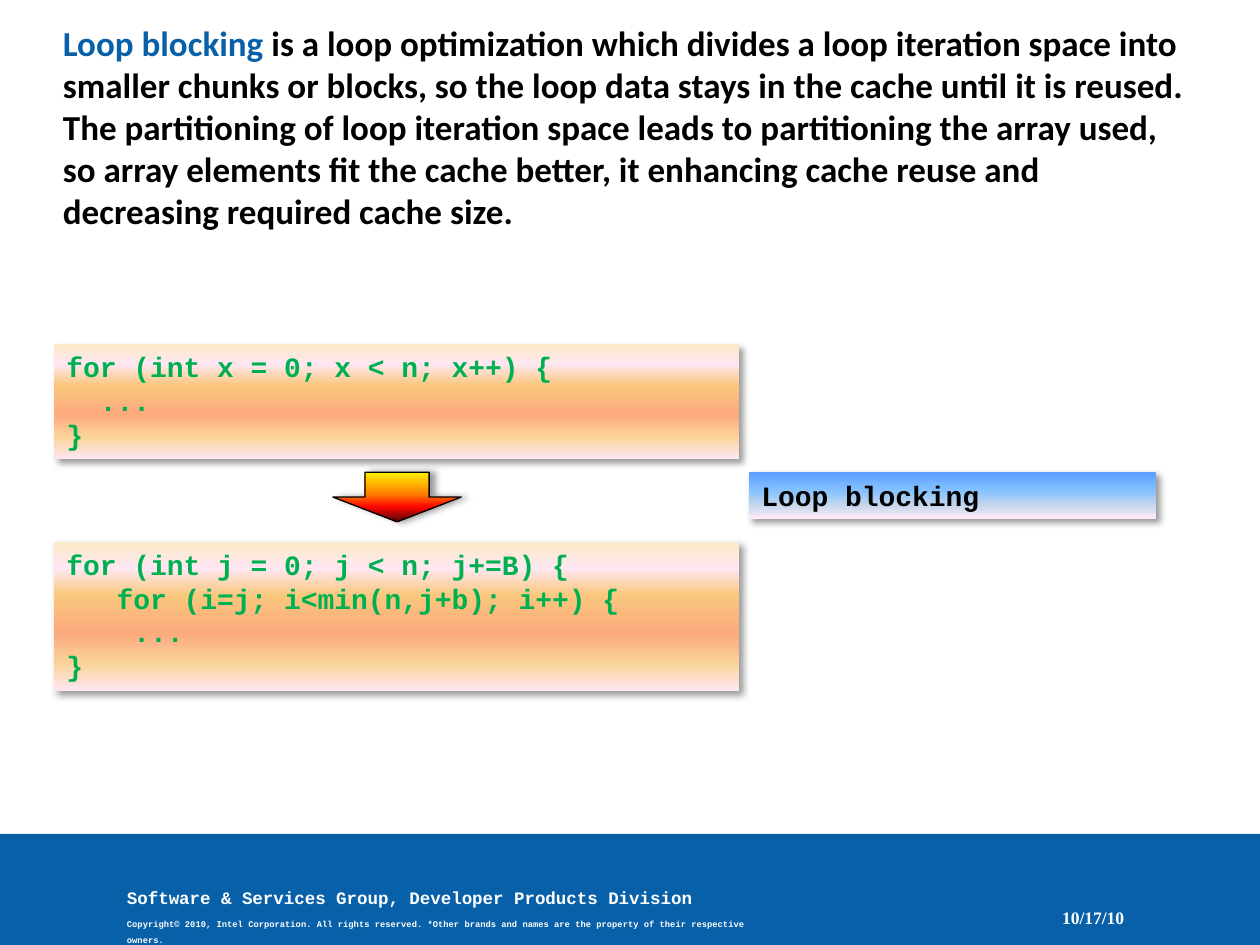
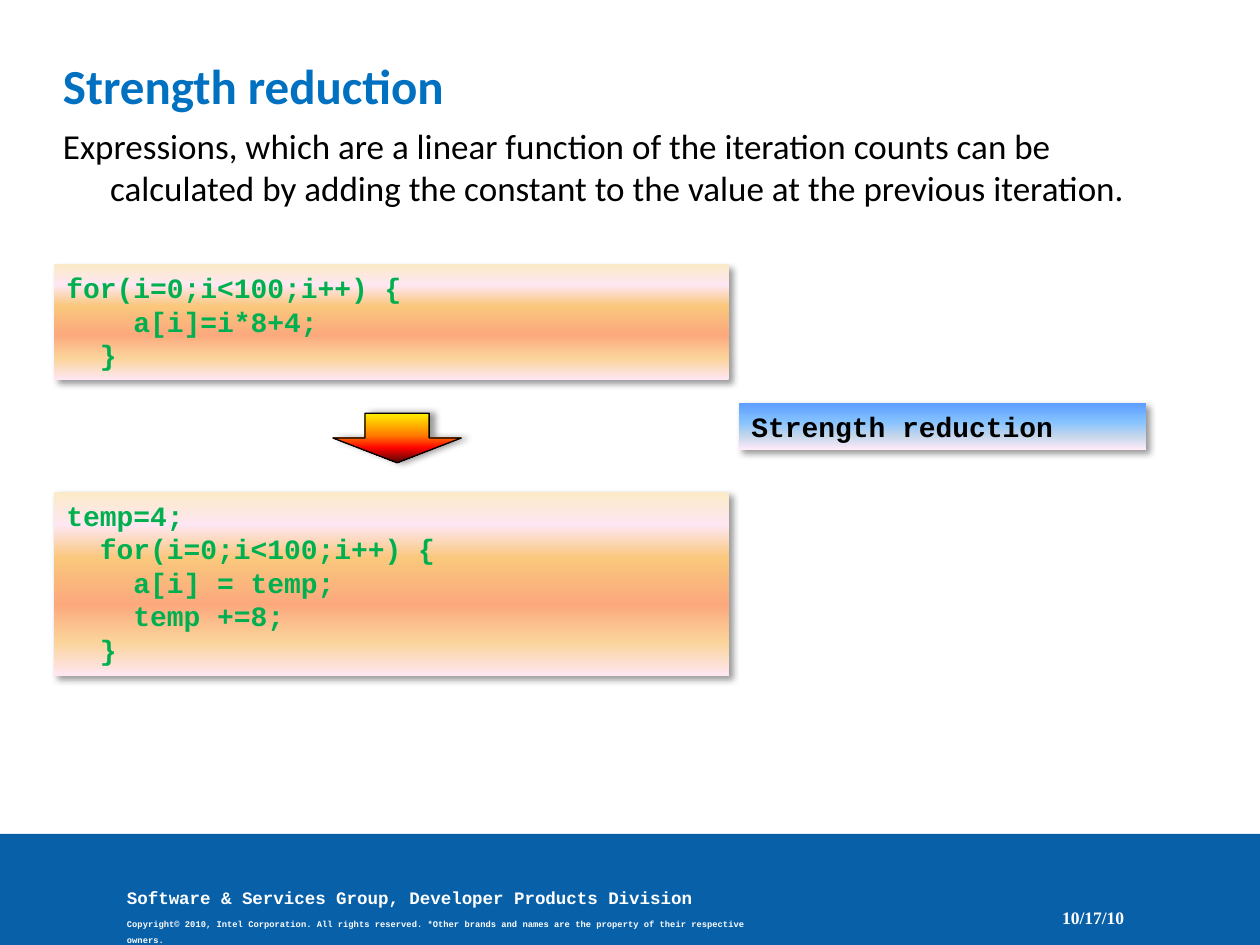
from dataclasses import dataclass

from lxml import etree
from pptx import Presentation
from pptx import util as u
from pptx.dml import color as c
from pptx.enum import shapes as s, text as t
from pptx.oxml import ns


@dataclass(frozen=True)
class Theme:
    band: str = "0860A8"
    head: str = "0070C0"
    code: str = "00B050"
    dark: str = "000000"
    light: str = "FFFFFF"
    sand: tuple = ((0, "FBEAC7"), (18, "FEE7F2"), (36, "FAC77D"),
                   (61, "FBA97D"), (82, "FBD49C"), (100, "FEE7F2"))
    fire: tuple = ((0, "FFF200"), (45, "FF7A00"), (70, "FF0300"), (100, "4D0808"))
    sky: tuple = ((0, "5E9EFF"), (40, "85C2FF"), (70, "C4D6EB"), (100, "FFEBFA"))
    sans: str = "Calibri"
    mono: str = "Courier New"
    serif: str = "Times New Roman"
    big: int = 28
    body: int = 20
    mid: int = 16
    small: int = 10
    tiny: int = 5


T = Theme()
LEFT = 1.09
GAP = 0.21
PAD = 0.25
LINE = 0.69


def cm(*nums):
    return [u.Cm(n) for n in nums]


def style(run, face, size, tint, bold=True):
    font = run.font
    font.name, font.size, font.bold = face, u.Pt(size), bold
    font.color.rgb = c.RGBColor.from_string(tint)


def add(parent, tag, **attrs):
    node = etree.SubElement(parent, ns.qn(tag))
    for key, value in attrs.items():
        node.set(key, str(value))
    return node


def tint_stops(shape, stops):
    shape.fill.gradient()
    shape.fill.gradient_angle = 270
    group = shape.element.spPr.find(ns.qn("a:gradFill")).find(ns.qn("a:gsLst"))
    for old in list(group):
        group.remove(old)
    for at, tint in stops:
        add(add(group, "a:gs", pos=at * 1000), "a:srgbClr", val=tint)


def cast_shadow(shape, angle):
    shape.shadow.inherit = False
    effects = shape.element.spPr.find(ns.qn("a:effectLst"))
    outer = add(effects, "a:outerShdw", blurRad=u.Pt(4), dist=u.Pt(3),
                dir=angle * 60000, algn="ctr", rotWithShape=0)
    add(add(outer, "a:srgbClr", val=T.dark), "a:alpha", val=40000)


def add_box(slide, kind, place, stops, angle=45):
    shape = slide.shapes.add_shape(kind, *cm(*place))
    tint_stops(shape, stops)
    shape.line.fill.background()
    cast_shadow(shape, angle)
    return shape


def add_panel(slide, x, y, wide, lines, stops, tint):
    place = x, y, wide, PAD + LINE * len(lines)
    frame = add_box(slide, s.MSO_SHAPE.RECTANGLE, place, stops).text_frame
    frame.word_wrap = True
    frame.vertical_anchor = t.MSO_ANCHOR.TOP
    frame.text = "\n".join(lines)
    for para in frame.paragraphs:
        para.alignment = t.PP_ALIGN.LEFT
        style(para.runs[0], T.mono, T.mid, tint)


def add_arrow(slide, y):
    arrow = add_box(slide, s.MSO_SHAPE.DOWN_ARROW, (6.71, y, 2.59, 1), T.fire, 0)
    arrow.line.color.rgb = c.RGBColor.from_string(T.dark)
    arrow.line.width = u.Pt(0.75)


def add_text(slide, place, wrap=True, inset=True):
    frame = slide.shapes.add_textbox(*cm(*place)).text_frame
    frame.word_wrap = wrap
    if not inset:
        frame.margin_left = frame.margin_right = 0
        frame.margin_top = frame.margin_bottom = 0
    return frame


def add_footer(slide):
    band = slide.shapes.add_shape(s.MSO_SHAPE.RECTANGLE, *cm(0, 16.81, 25.4, 2.24))
    band.fill.solid()
    band.fill.fore_color.rgb = c.RGBColor.from_string(T.band)
    band.line.fill.background()
    band.shadow.inherit = False

    frame = add_text(slide, (2.31, 17.68, 13.03, 1.14), wrap=False)
    frame.text = ("Software & Services Group, Developer Products Division\n"
                  "Copyright© 2010, Intel Corporation. All rights reserved. "
                  "*Other brands and names are the property of their respective owners.")
    group, legal = frame.paragraphs
    group.line_spacing, legal.line_spacing = 1.2, 1.5
    legal.space_before = u.Pt(3.1)
    style(group.runs[0], T.mono, T.small, T.light)
    style(legal.runs[0], T.mono, T.tiny, T.light)

    frame = add_text(slide, (19.84, 18.03, 3.07, 1.02))
    frame.vertical_anchor = t.MSO_ANCHOR.MIDDLE
    frame.text = "10/17/10"
    date = frame.paragraphs[0]
    date.alignment = t.PP_ALIGN.RIGHT
    date.line_spacing = 0.8
    style(date.runs[0], T.serif, T.small, T.light)


def add_intro(slide, term, rest):
    para = add_text(slide, (1.27, 0.43, 22.89, 5.69), inset=False).paragraphs[0]
    for words, tint in ((term, T.band), (rest, T.dark)):
        run = para.add_run()
        run.text = words
        style(run, T.sans, T.body, tint)


def add_topic(slide, title, words):
    frame = add_text(slide, (1.27, 1.12, 22.89, 3.4), inset=False)
    frame.text = f"{title}\n{words}"
    head, body = frame.paragraphs
    for para in (head, body):
        props = para._p.get_or_add_pPr()
        props.set("marL", str(u.Cm(0.95)))
        props.set("indent", str(-u.Cm(0.95)))
    body.space_before = u.Pt(6)
    style(head.runs[0], T.sans, T.big, T.head)
    style(body.runs[0], T.sans, T.body, T.dark, False)


def add_change(slide, wide, before, after, arrow, label):
    for y, lines in (before, after):
        add_panel(slide, LEFT, y, wide, lines, T.sand, T.code)
    add_arrow(slide, arrow)
    y, name = label
    add_panel(slide, LEFT + wide + GAP, y, 8.2, [name], T.sky, T.dark)


def main():
    deck = Presentation()
    deck.slide_width, deck.slide_height = cm(25.4, 19.05)
    block, reduce = (deck.slides.add_slide(deck.slide_layouts[6]) for _ in range(2))

    add_footer(block)
    add_intro(block, "Loop blocking ",
              "is a loop optimization which divides a loop iteration space into "
              "smaller chunks or blocks, so the loop data stays in the cache until "
              "it is reused. The partitioning of loop iteration space leads to "
              "partitioning the array used, so array elements fit the cache better, "
              "it enhancing cache reuse and decreasing required cache size.")
    add_change(block, 13.8,
               (6.93, ["for (int x = 0; x < n; x++) {", "  ...", "}"]),
               (10.92, ["for (int j = 0; j < n; j+=B) {",
                        "   for (i=j; i<min(n,j+b); i++) {", "    ...", "}"]),
               9.52, (9.52, "Loop blocking"))

    add_footer(reduce)
    add_topic(reduce, "Strength reduction",
              "Expressions, which are a linear function of the iteration counts can be "
              "calculated by adding the constant to the value at the previous iteration.")
    add_change(reduce, 13.6,
               (5.33, ["for(i=0;i<100;i++) {", "    a[i]=i*8+4;", "  }"]),
               (9.92, ["temp=4;", "  for(i=0;i<100;i++) {", "    a[i] = temp;",
                       "    temp +=8;", "  }"]),
               8.33, (8.13, "Strength reduction"))

    deck.save("out.pptx")


if __name__ == "__main__":
    main()
